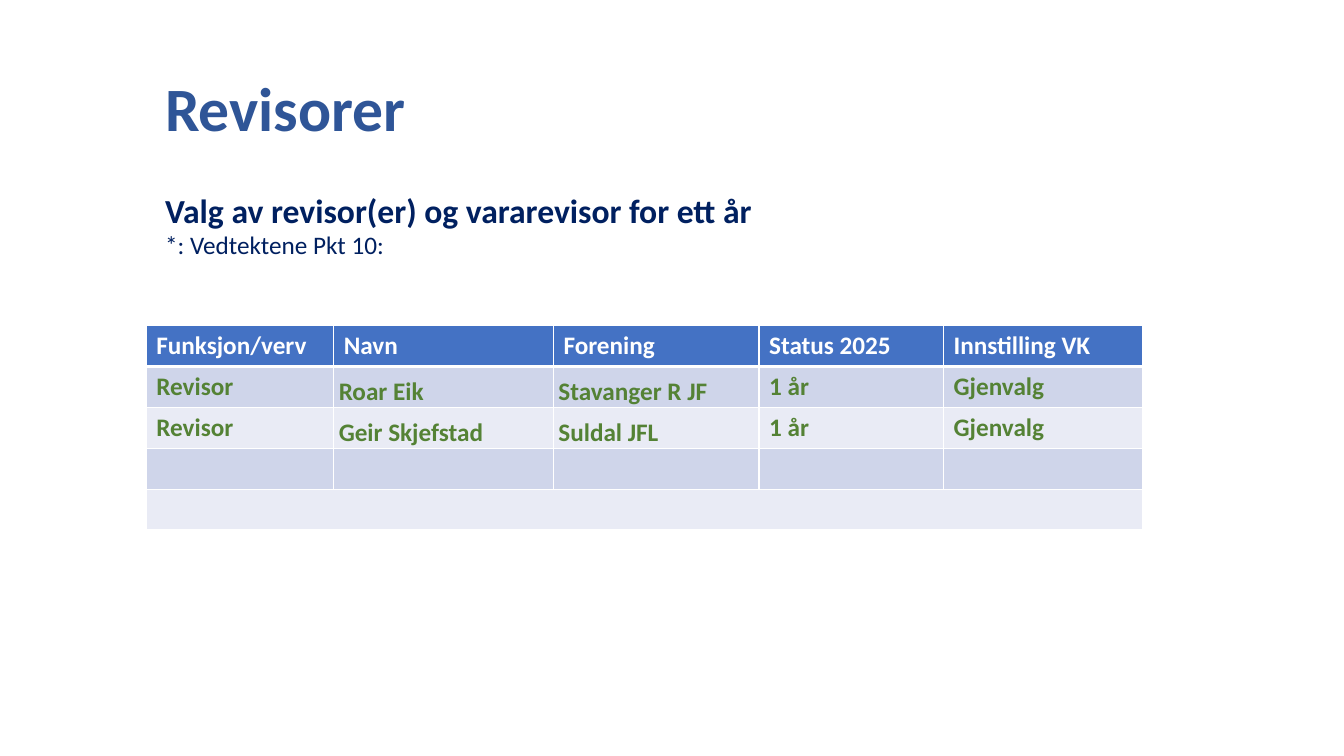
from dataclasses import dataclass

from lxml.etree import SubElement
from pptx import Presentation
from pptx.dml.color import RGBColor
from pptx.enum.text import MSO_ANCHOR
from pptx.oxml.ns import qn
from pptx.slide import Slide
from pptx.table import _Cell
from pptx.text.text import TextFrame
from pptx.util import Inches, Pt

SLIDE_WIDTH = Inches(13.33)
SLIDE_HEIGHT = Inches(7.5)
FONT = "Calibri"
COLOURS = {
    "title": "2F5597",
    "subtitle": "002060",
    "header": "4472C4",
    "band_dark": "CFD5EA",
    "band_light": "E9EBF5",
    "entry": "548235",
    "white": "FFFFFF",
}


@dataclass(frozen=True)
class Place:
    left: float
    top: float
    width: float
    height: float


@dataclass(frozen=True)
class Column:
    heading: str
    width: float
    entries: tuple[str, str]
    bottom_aligned: bool = False


TITLE = Place(11.55, 5.07, 73.88, 19.33)
SUBTITLE = Place(11.55, 24.4, 50.03, 16.13)
TABLE_LEFT, TABLE_TOP, ROW_HEIGHT, ROW_COUNT = 10.88, 43.4 - 0.33, 5.41, 5
COLUMNS = (
    Column("Funksjon/verv", 13.95, ("Revisor", "Revisor")),
    Column("Navn", 16.35, ("Roar Eik", "Geir Skjefstad"), True),
    Column("Forening", 15.3, ("Stavanger R JF", "Suldal JFL"), True),
    Column("Status 2025", 13.73, ("1 år", "1 år")),
    Column("Innstilling VK", 14.78, ("Gjenvalg", "Gjenvalg")),
)


def across(percent: float) -> int:
    return round(SLIDE_WIDTH * percent / 100)


def down(percent: float) -> int:
    return round(SLIDE_HEIGHT * percent / 100)


def write(frame: TextFrame, text: str, *, size: float, colour: str, bold: bool = True,
          line_spacing: float = 1.0, space_after: float = 0, new: bool = False) -> None:
    paragraph = frame.add_paragraph() if new else frame.paragraphs[0]
    paragraph.line_spacing = line_spacing
    paragraph.space_after = Pt(space_after)
    run = paragraph.add_run()
    run.text = text
    run.font.name = FONT
    run.font.size = Pt(size)
    run.font.bold = bold
    run.font.color.rgb = RGBColor.from_string(COLOURS[colour])


def add_text_box(slide: Slide, place: Place, anchor: MSO_ANCHOR) -> TextFrame:
    shape = slide.shapes.add_textbox(
        across(place.left), down(place.top), across(place.width), down(place.height))
    frame = shape.text_frame
    frame.word_wrap = True
    frame.vertical_anchor = anchor
    return frame


def style_cell(cell: _Cell, fill: str, top: float, bottom: float) -> None:
    properties = cell._tc.get_or_add_tcPr()
    for side, width in (("L", 1), ("R", 1), ("T", top), ("B", bottom)):
        line = SubElement(properties, qn(f"a:ln{side}"), w=str(Pt(width)))
        solid = SubElement(line, qn("a:solidFill"))
        SubElement(solid, qn("a:srgbClr"), val=COLOURS["white"])
    cell.fill.solid()
    cell.fill.fore_color.rgb = RGBColor.from_string(COLOURS[fill])


def add_auditor_table(slide: Slide) -> None:
    table = slide.shapes.add_table(
        ROW_COUNT, len(COLUMNS), across(TABLE_LEFT), down(TABLE_TOP),
        across(sum(column.width for column in COLUMNS)), down(ROW_HEIGHT * ROW_COUNT)).table
    for row in table.rows:
        row.height = down(ROW_HEIGHT)
    for column_index, column in enumerate(COLUMNS):
        table.columns[column_index].width = across(column.width)
        for row_index in range(ROW_COUNT):
            cell = table.cell(row_index, column_index)
            band = "band_dark" if row_index % 2 else "band_light"
            style_cell(cell, band if row_index else "header",
                       top=3 if row_index == 1 else 1, bottom=1 if row_index else 3)
        write(table.cell(0, column_index).text_frame, column.heading, size=18, colour="white")
        for row_index, entry in enumerate(column.entries, start=1):
            cell = table.cell(row_index, column_index)
            if column.bottom_aligned:
                cell.vertical_anchor = MSO_ANCHOR.BOTTOM
                cell.margin_left = cell.margin_right = Inches(0.05)
                cell.margin_top = cell.margin_bottom = 0
            write(cell.text_frame, entry, size=18, colour="entry",
                  line_spacing=1.05 if column.bottom_aligned else 1.0,
                  space_after=8 if column.bottom_aligned else 0)
    last_row = ROW_COUNT - 1
    table.cell(last_row, 0).merge(table.cell(last_row, len(COLUMNS) - 1))


def main() -> None:
    presentation = Presentation()
    presentation.slide_width = SLIDE_WIDTH
    presentation.slide_height = SLIDE_HEIGHT
    slide = presentation.slides.add_slide(presentation.slide_layouts[6])
    title = add_text_box(slide, TITLE, MSO_ANCHOR.MIDDLE)
    write(title, "Revisorer", size=44, colour="title", line_spacing=0.9)
    add_auditor_table(slide)
    subtitle = add_text_box(slide, SUBTITLE, MSO_ANCHOR.TOP)
    write(subtitle, "Valg av revisor(er) og vararevisor for ett år", size=24, colour="subtitle")
    write(subtitle, "*: Vedtektene Pkt 10:", size=18, colour="subtitle", bold=False, new=True)
    presentation.save("out.pptx")


if __name__ == "__main__":
    main()
